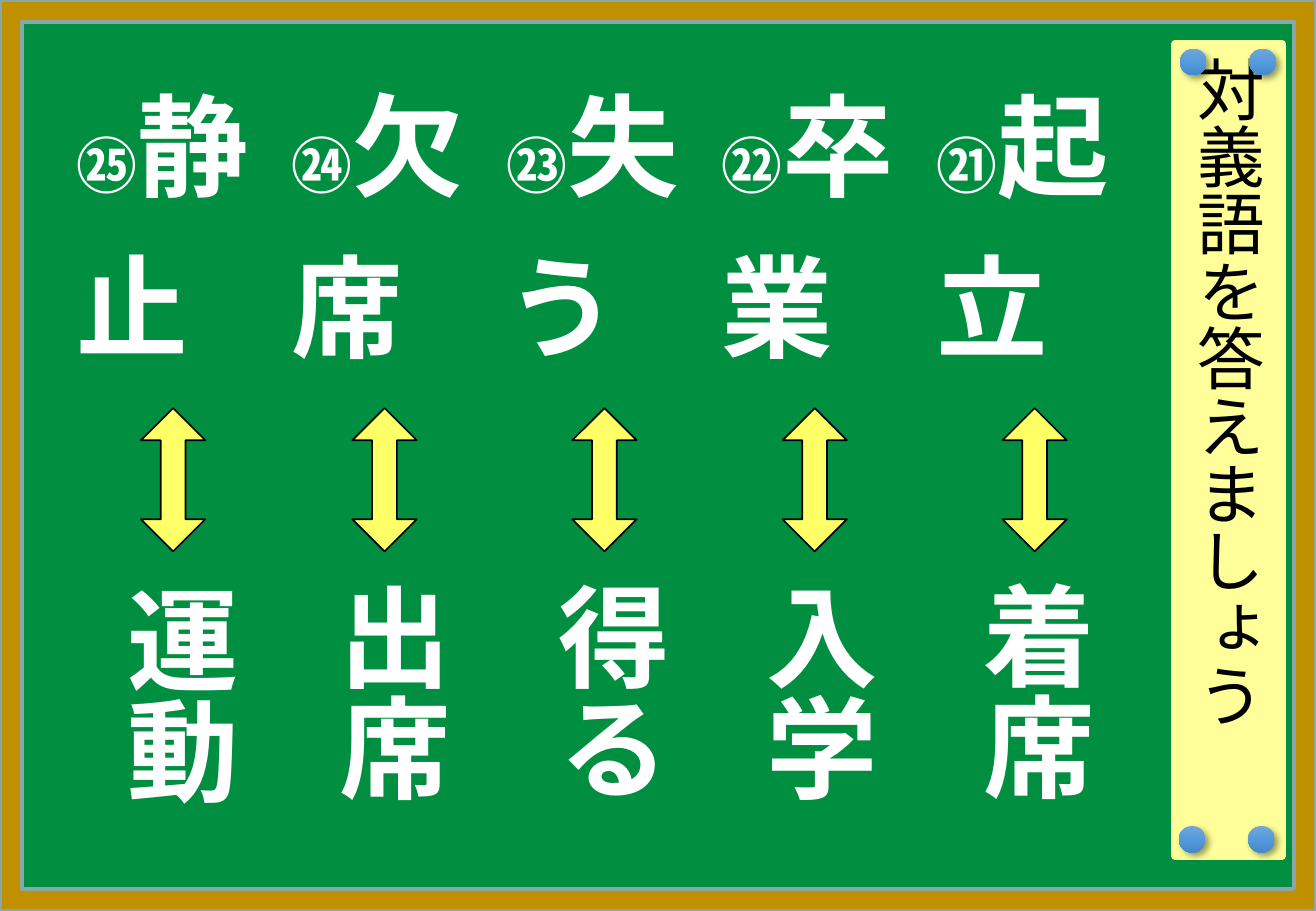
from pptx import Presentation
from pptx.dml.color import RGBColor
from pptx.enum.shapes import MSO_SHAPE as Shape
from pptx.enum.text import MSO_ANCHOR as Anchor, MSO_AUTO_SIZE as AutoSize, PP_ALIGN as Align
from pptx.oxml import parse_xml
from pptx.oxml.ns import nsdecls, qn
from pptx.util import Inches, Pt

FONT = "Noto Sans CJK JP"
COLORS = {
    "board": "008E40", "wood": "BF9000", "edge": "8AA6A8", "paper": "FFFF99",
    "arrow": "FFFF66", "chalk": "FFFFFF", "ink": "000000",
    "magnet_top": "71A6DB", "magnet_middle": "559BDB", "magnet_bottom": "448ACA",
}
PLAIN_TABLE = "{2D5ABB26-0587-4C30-8999-92F81FD0307C}"
WORDS = [
    ("㉕", "静止", "運動", 1.16, 0.76, 4.71),
    ("㉔", "欠席", "出席", 2.9, 2.51, 4.69),
    ("㉓", "失う", "得る", 4.71, 4.31, 4.69),
    ("㉒", "卒業", "入学", 6.44, 6.02, 4.69),
    ("㉑", "起立", "着席", 8.25, 7.81, 4.68),
]
ROW_HEIGHTS = [2.91, 1.42, 2.42]
COLUMN_WIDTH = 1.77
MAGNETS = [(10.28, 0.4), (9.71, 0.4), (10.27, 6.8), (9.7, 6.8)]


def color(name):
    return RGBColor.from_string(COLORS[name])


def add_span(para, text, size, ink, bold=False):
    span = para.add_run()
    span.text = text
    span.font.size = Pt(size)
    span.font.bold = bold
    span.font.name = FONT
    span.font.color.rgb = color(ink)
    properties = span.font._element
    properties.set("lang", "ja-JP")
    east_asian = parse_xml(f'<a:ea {nsdecls("a")} typeface="{FONT}"/>')
    properties.find(qn("a:latin")).addnext(east_asian)


def set_vertical(frame, wrap):
    frame._txBody.bodyPr.set("vert", "eaVert")
    frame.word_wrap = wrap
    frame.auto_size = AutoSize.SHAPE_TO_FIT_TEXT


def add_figure(page, kind, left, top, width, height, fill, line, weight, adjustments=()):
    figure = page.shapes.add_shape(kind, Inches(left), Inches(top), Inches(width), Inches(height))
    figure.shadow.inherit = False
    figure.fill.solid()
    figure.fill.fore_color.rgb = color(fill)
    figure.line.color.rgb = color(line)
    figure.line.width = Pt(weight)
    for index, value in enumerate(adjustments):
        figure.adjustments[index] = value
    return figure


def add_title(page, text):
    strip = add_figure(page, Shape.RECTANGLE, 9.67, 0.36, 0.88, 6.69, "paper", "paper", 4.5)
    frame = strip.text_frame
    set_vertical(frame, True)
    frame.vertical_anchor = Anchor.MIDDLE
    para = frame.paragraphs[0]
    para.alignment = Align.LEFT
    add_span(para, text, 40, "ink")


def add_question_table(page):
    holder = page.shapes.add_table(
        len(ROW_HEIGHTS), len(WORDS), Inches(0.53), Inches(0.36),
        Inches(COLUMN_WIDTH * len(WORDS)), Inches(sum(ROW_HEIGHTS)))
    table = holder.table
    table.first_row = False
    table.horz_banding = False
    table._tbl.tblPr.find(qn("a:tableStyleId")).text = PLAIN_TABLE
    for column in table.columns:
        column.width = Inches(COLUMN_WIDTH)
    for row, height in zip(table.rows, ROW_HEIGHTS):
        row.height = Inches(height)
    for cell in table.iter_cells():
        cell.fill.background()
    for index, (number, word, *_) in enumerate(WORDS):
        cell = table.cell(0, index)
        cell.vertical_anchor = Anchor.MIDDLE
        cell._tc.get_or_add_tcPr().set("vert", "eaVert")
        para = cell.text_frame.paragraphs[0]
        add_span(para, number, 36, "chalk", True)
        add_span(para, word, 66, "chalk", True)


def add_answer(page, text, left, top):
    box = page.shapes.add_textbox(Inches(left), Inches(top), Inches(1.31), Inches(1.92))
    set_vertical(box.text_frame, False)
    add_span(box.text_frame.paragraphs[0], text, 66, "chalk", True)


def add_magnet(page, left, top):
    magnet = page.shapes.add_shape(
        Shape.OVAL, Inches(left), Inches(top), Inches(0.22), Inches(0.22))
    properties = magnet._element.spPr
    stops = "".join(
        f'<a:gs pos="{position}"><a:srgbClr val="{COLORS[name]}"/></a:gs>'
        for position, name in [(0, "magnet_top"), (50000, "magnet_middle"), (100000, "magnet_bottom")])
    properties.append(parse_xml(
        f'<a:gradFill {nsdecls("a")} rotWithShape="1"><a:gsLst>{stops}</a:gsLst>'
        '<a:lin ang="5400000" scaled="0"/></a:gradFill>'))
    magnet.line.fill.background()
    properties.append(parse_xml(
        f'<a:effectLst {nsdecls("a")}><a:outerShdw blurRad="{Pt(4)}" dist="{Pt(3)}" '
        f'dir="2700000" algn="tl" rotWithShape="0"><a:srgbClr val="{COLORS["ink"]}">'
        '<a:alpha val="40000"/></a:srgbClr></a:outerShdw></a:effectLst>'))


def main():
    deck = Presentation()
    deck.slide_width = Inches(10.83)
    deck.slide_height = Inches(7.5)
    page = deck.slides.add_slide(deck.slide_layouts[6])
    page.background.fill.solid()
    page.background.fill.fore_color.rgb = color("board")

    add_figure(page, Shape.FRAME, 0, 0, 10.83, 7.5, "wood", "edge", 2, [0.024])
    add_title(page, "対義語を答えましょう")
    add_question_table(page)
    for *_, arrow_left, _, _ in reversed(WORDS):
        add_figure(page, Shape.UP_DOWN_ARROW, arrow_left, 3.36, 0.53, 1.18,
                   "arrow", "ink", 1, [0.326, 0.384])
    for _, _, answer, _, left, top in reversed(WORDS):
        add_answer(page, answer, left, top)
    for left, top in MAGNETS:
        add_magnet(page, left, top)

    deck.save("out.pptx")


if __name__ == "__main__":
    main()
